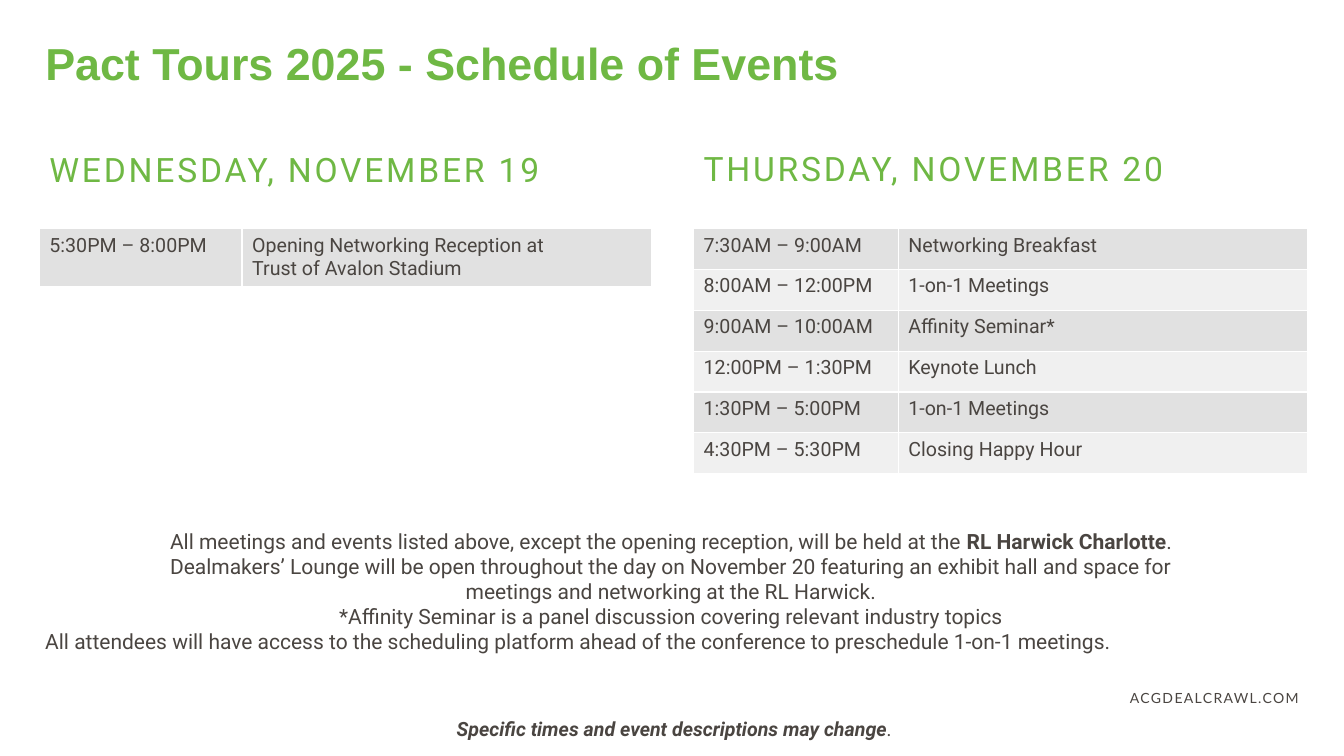
from dataclasses import dataclass

import lxml.etree
import pptx
import pptx.dml.color
import pptx.enum.text
import pptx.oxml.ns
import pptx.slide
import pptx.table
import pptx.text.text
import pptx.util

SLIDE_WIDTH = pptx.util.Inches(13.33)
SLIDE_HEIGHT = pptx.util.Inches(7.5)
COLORS = {
    "green": "6FB844",
    "text": "4A4541",
    "dark_row": "E1E1E1",
    "light_row": "F0F0F0",
    "border": "FFFFFF",
}
LEFT = pptx.enum.text.PP_ALIGN.LEFT
CENTER = pptx.enum.text.PP_ALIGN.CENTER
RIGHT = pptx.enum.text.PP_ALIGN.RIGHT
TOP = pptx.enum.text.MSO_ANCHOR.TOP
MIDDLE = pptx.enum.text.MSO_ANCHOR.MIDDLE


@dataclass(frozen=True)
class Style:
    size: float
    color: str = "text"
    font: str = "Roboto"
    bold: bool = False
    italic: bool = False
    tracking: int = 0
    line_spacing: float = 1.0


@dataclass(frozen=True)
class Span:
    text: str
    bold: bool | None = None


@dataclass(frozen=True)
class Line:
    spans: tuple[Span, ...]
    alignment: pptx.enum.text.PP_ALIGN = LEFT


@dataclass(frozen=True)
class TextBlock:
    left: float
    top: float
    width: float
    height: float
    style: Style
    lines: tuple[Line, ...]
    anchor: pptx.enum.text.MSO_ANCHOR = TOP


@dataclass(frozen=True)
class Schedule:
    left: float
    columns: tuple[float, float]
    row_height: float
    events: tuple[tuple[str, str], ...]


def across(percent: float) -> int:
    return round(SLIDE_WIDTH * percent / 100)


def down(percent: float) -> int:
    return round(SLIDE_HEIGHT * percent / 100)


def line(text: str, alignment: pptx.enum.text.PP_ALIGN = LEFT) -> Line:
    return Line((Span(text),), alignment)


HEADING = Style(24, "green", tracking=200, line_spacing=0.9)
TITLE = Style(32, "green", "Arial", bold=True, line_spacing=0.9)
ADDRESS = Style(10, font="Lato", tracking=100)
EVENT = Style(14)
NOTE = Style(15)
NOTICE = Style(14, bold=True, italic=True)

TEXT_BLOCKS = (
    TextBlock(79.22, 90.53, 18.15, 3.6, ADDRESS, (line("ACGDEALCRAWL.COM", RIGHT),)),
    TextBlock(2.63, 4.93, 94.75, 7.73, TITLE, (line("Pact Tours 2025 - Schedule of Events"),)),
    TextBlock(2.93, 17.33, 45.76, 10.8, HEADING, (line("WEDNESDAY, NOVEMBER 19"),), MIDDLE),
    TextBlock(51.61, 17.33, 38.26, 10.53, HEADING, (line("THURSDAY, NOVEMBER 20"),), MIDDLE),
    TextBlock(2.63, 69.2, 94.6, 18.13, NOTE, (
        Line((
            Span("All meetings and events listed above, except the opening reception, will be held at the "),
            Span("RL Harwick Charlotte", bold=True),
            Span("."),
        ), CENTER),
        line("Dealmakers’ Lounge will be open throughout the day on November 20 "
             "featuring an exhibit hall and space for", CENTER),
        line("meetings and networking at the RL Harwick.", CENTER),
        line("*Affinity Seminar is a panel discussion covering relevant industry topics", CENTER),
        line("All attendees will have access to the scheduling platform ahead of the conference "
             "to preschedule 1-on-1 meetings."),
    )),
    TextBlock(25.81, 94.13, 48.76, 4.53, NOTICE, (
        Line((Span("Specific times and event descriptions may change"), Span(".", bold=False)), CENTER),
    )),
)

SCHEDULE_TOP = 30.27
SCHEDULES = (
    Schedule(2.93, (15.08, 30.46), 7.6, (
        ("5:30PM – 8:00PM", "Opening Networking Reception at\nTrust of Avalon Stadium"),
    )),
    Schedule(51.61, (15.23, 30.46), 5.4, (
        ("7:30AM – 9:00AM", "Networking Breakfast"),
        ("8:00AM – 12:00PM", "1-on-1 Meetings"),
        ("9:00AM – 10:00AM", "Affinity Seminar*"),
        ("12:00PM – 1:30PM", "Keynote Lunch"),
        ("1:30PM – 5:00PM", "1-on-1 Meetings"),
        ("4:30PM – 5:30PM", "Closing Happy Hour"),
    )),
)


def write_lines(text_frame: pptx.text.text.TextFrame, lines: tuple[Line, ...], style: Style) -> None:
    for index, item in enumerate(lines):
        paragraph = text_frame.add_paragraph() if index else text_frame.paragraphs[0]
        paragraph.alignment = item.alignment
        paragraph.line_spacing = style.line_spacing
        for span in item.spans:
            run = paragraph.add_run()
            run.text = span.text
            font_values = {
                "name": style.font,
                "size": pptx.util.Pt(style.size),
                "bold": style.bold if span.bold is None else span.bold,
                "italic": style.italic,
            }
            for attribute, value in font_values.items():
                setattr(run.font, attribute, value)
            run.font.color.rgb = pptx.dml.color.RGBColor.from_string(COLORS[style.color])
            if style.tracking:
                run._r.get_or_add_rPr().set("spc", str(style.tracking))


def draw_text(slide: pptx.slide.Slide, block: TextBlock) -> None:
    shape = slide.shapes.add_textbox(
        across(block.left), down(block.top), across(block.width), down(block.height)
    )
    shape.text_frame.word_wrap = True
    shape.text_frame.vertical_anchor = block.anchor
    write_lines(shape.text_frame, block.lines, block.style)


def add_borders(cell: pptx.table._Cell) -> None:
    qualified = pptx.oxml.ns.qn
    properties = cell._tc.get_or_add_tcPr()
    for side in ("a:lnL", "a:lnR", "a:lnT", "a:lnB"):
        border = lxml.etree.SubElement(properties, qualified(side), w=str(pptx.util.Pt(1)))
        fill = lxml.etree.SubElement(border, qualified("a:solidFill"))
        lxml.etree.SubElement(fill, qualified("a:srgbClr"), val=COLORS["border"])


def draw_schedule(slide: pptx.slide.Slide, schedule: Schedule) -> None:
    row_count = len(schedule.events)
    table = slide.shapes.add_table(
        row_count, len(schedule.columns),
        across(schedule.left), down(SCHEDULE_TOP),
        across(sum(schedule.columns)), down(schedule.row_height * row_count),
    ).table
    for attribute, value in {"first_row": False, "horz_banding": False}.items():
        setattr(table, attribute, value)
    for column, width in zip(table.columns, schedule.columns):
        column.width = across(width)
    for row_index, event in enumerate(schedule.events):
        table.rows[row_index].height = down(schedule.row_height)
        row_color = COLORS["light_row" if row_index % 2 else "dark_row"]
        for column_index, text in enumerate(event):
            cell = table.cell(row_index, column_index)
            add_borders(cell)
            cell.fill.solid()
            cell.fill.fore_color.rgb = pptx.dml.color.RGBColor.from_string(row_color)
            write_lines(cell.text_frame, tuple(map(line, text.split("\n"))), EVENT)


def main() -> None:
    presentation = pptx.Presentation()
    presentation.slide_width = SLIDE_WIDTH
    presentation.slide_height = SLIDE_HEIGHT
    slide = presentation.slides.add_slide(presentation.slide_layouts[6])
    for block in TEXT_BLOCKS:
        draw_text(slide, block)
    for schedule in SCHEDULES:
        draw_schedule(slide, schedule)
    presentation.save("out.pptx")


if __name__ == "__main__":
    main()
